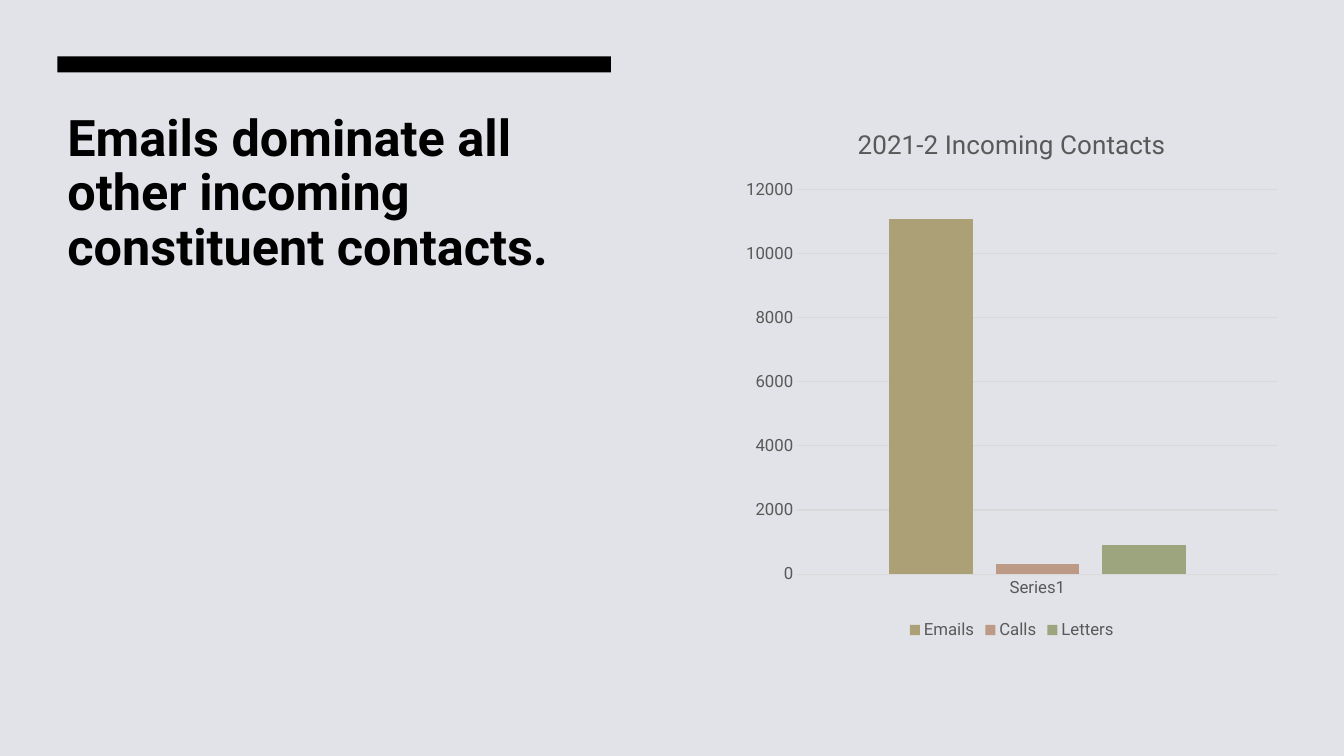
from pptx import Presentation
from pptx.chart import data
from pptx.dml.color import RGBColor
from pptx.enum import chart as ch, shapes, text
from pptx.util import Inches, Pt

PALE = RGBColor(0xE2, 0xE3, 0xE8)
BLACK = RGBColor(0, 0, 0)
GREY = RGBColor(0x59, 0x59, 0x59)
GRID = RGBColor(0xD9, 0xD9, 0xD9)
SAND = RGBColor(0xAC, 0xA1, 0x76)
CLAY = RGBColor(0xBD, 0x9A, 0x85)
SAGE = RGBColor(0x9C, 0xA5, 0x7D)
FACE = "Roboto"
WIDE, HIGH = 13.33, 7.5
CONTACTS = [("Emails", 11100, SAND), ("Calls", 300, CLAY), ("Letters", 900, SAGE)]


def style(font, size, color, bold=False):
    font.name, font.size, font.bold = FACE, Pt(size), bold
    font.color.rgb = color


def add_block(slide, left, top, width, height, color):
    block = slide.shapes.add_shape(
        shapes.MSO_SHAPE.RECTANGLE, *map(Inches, (left, top, width, height)))
    block.shadow.inherit = False
    block.fill.solid()
    block.fill.fore_color.rgb = color
    block.line.fill.background()


def add_heading(slide, left, top, width, height):
    # Accent bar
    add_block(slide, left, top, width, 0.16, BLACK)
    # Headline, starting below the bar
    gap = 0.51
    box = slide.shapes.add_textbox(
        *map(Inches, (left, top + gap, width, height - gap)))
    frame = box.text_frame
    frame.word_wrap = True
    frame.vertical_anchor = text.MSO_ANCHOR.TOP
    frame.text = "Emails dominate all other incoming constituent contacts."
    para = frame.paragraphs[0]
    para.line_spacing = 0.9
    style(para.runs[0].font, 36, BLACK, True)


def add_columns(slide, left, top, width, height):
    # Contact counts
    counts = data.CategoryChartData()
    counts.categories = ["Series1"]
    for name, count, _ in CONTACTS:
        counts.add_series(name, [count])
    chart = slide.shapes.add_chart(
        ch.XL_CHART_TYPE.COLUMN_CLUSTERED,
        *map(Inches, (left, top, width, height)), counts).chart
    style(chart.font, 10, BLACK)

    # Title and legend
    chart.has_title = True
    title = chart.chart_title.text_frame
    title.text = "2021-2 Incoming Contacts"
    style(title.paragraphs[0].runs[0].font, 18.6, GREY)
    chart.has_legend = True
    chart.legend.position = ch.XL_LEGEND_POSITION.BOTTOM
    chart.legend.include_in_layout = False
    style(chart.legend.font, 12, GREY)

    # Columns
    plot = chart.plots[0]
    plot.vary_by_categories = False
    plot.gap_width, plot.overlap = 219, -27
    for series, (_, _, color) in zip(plot.series, CONTACTS):
        series.format.fill.solid()
        series.format.fill.fore_color.rgb = color

    # Axes
    base, scale = chart.category_axis, chart.value_axis
    for axis in (base, scale):
        axis.major_tick_mark = axis.minor_tick_mark = ch.XL_TICK_MARK.NONE
        style(axis.tick_labels.font, 12, GREY)
    scale.minimum_scale, scale.maximum_scale, scale.major_unit = 0, 12000, 2000
    scale.has_major_gridlines = True
    scale.format.line.fill.background()
    for line in (base.format.line, scale.major_gridlines.format.line):
        line.color.rgb = GRID
        line.width = Pt(0.75)


def main():
    deck = Presentation()
    deck.slide_width, deck.slide_height = Inches(WIDE), Inches(HIGH)
    slide = deck.slides.add_slide(deck.slide_layouts[6])
    # Backdrop
    slide.background.fill.solid()
    slide.background.fill.fore_color.rgb = PALE
    add_block(slide, 0, 0, WIDE, HIGH, PALE)
    # Left and right halves
    add_heading(slide, 0.57, 0.56, 5.49, 2.78)
    add_columns(slide, 7.29, 1.06, 5.49, 5.33)
    deck.save("out.pptx")


if __name__ == "__main__":
    main()
